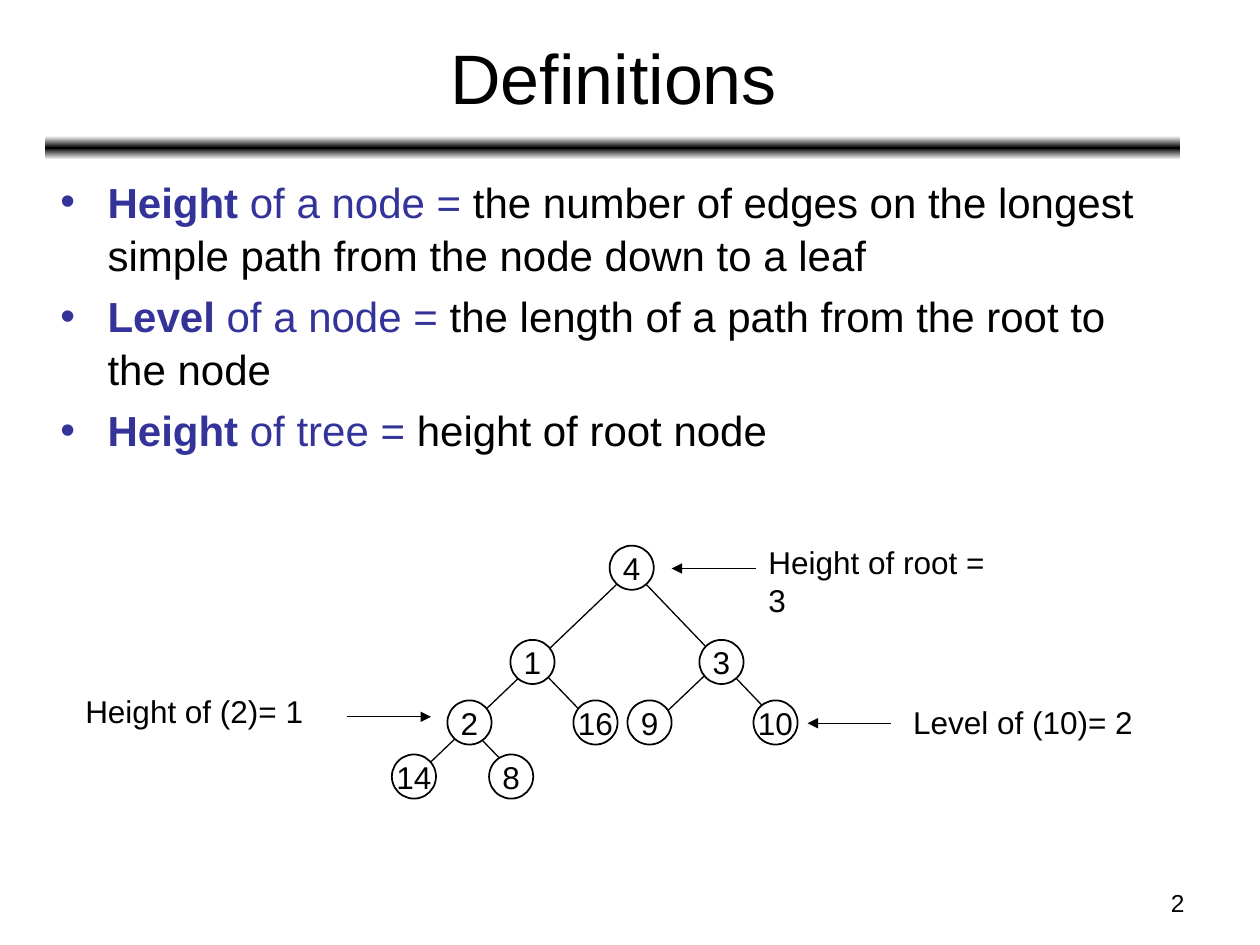
from copy import deepcopy

from lxml.etree import SubElement
from pptx import Presentation
from pptx.dml.color import RGBColor
from pptx.enum.shapes import MSO_CONNECTOR, MSO_SHAPE
from pptx.enum.text import MSO_ANCHOR, PP_ALIGN
from pptx.oxml.ns import qn
from pptx.util import Cm, Pt

BLACK, WHITE, BLUE = "000000", "FFFFFF", "333399"
NODE_SIZE = 0.89
LEVEL_TOPS = [11, 12.9, 14.12, 15.21]


def color(hex_value):
    return RGBColor.from_string(hex_value)


class SlideBuilder:
    font_name = "Arial"

    def __init__(self, slide):
        self.slide = slide

    def style(self, paragraph, size, align=PP_ALIGN.LEFT):
        paragraph.alignment = align
        paragraph.font.name = self.font_name
        paragraph.font.size = Pt(size)
        paragraph.font.color.rgb = color(BLACK)

    def text(self, text, box, size, align=PP_ALIGN.LEFT, anchor=MSO_ANCHOR.TOP, wrap=True):
        shape = self.slide.shapes.add_textbox(*map(Cm, box))
        frame = shape.text_frame
        frame.word_wrap = wrap
        frame.vertical_anchor = anchor
        frame.text = text
        self.style(frame.paragraphs[0], size, align)

    def definitions(self, items, box, size):
        frame = self.slide.shapes.add_textbox(*map(Cm, box)).text_frame
        frame.word_wrap = True
        for index, (term, subject, meaning) in enumerate(items):
            paragraph = frame.add_paragraph() if index else frame.paragraphs[0]
            paragraph.line_spacing = 1.05
            if index:
                paragraph.space_before = Pt(size * 0.2)
            self.bullet(paragraph)
            self.style(paragraph, size)
            for text, hex_value, bold in ((term, BLUE, True), (subject, BLUE, False), (meaning, BLACK, False)):
                run = paragraph.add_run()
                run.text = text
                run.font.bold = bold
                run.font.color.rgb = color(hex_value)

    def bullet(self, paragraph):
        properties = paragraph._p.get_or_add_pPr()
        properties.set("marL", str(Cm(0.95)))
        properties.set("indent", str(Cm(-0.95)))
        SubElement(SubElement(properties, qn("a:buClr")), qn("a:srgbClr"), val=BLUE)
        SubElement(properties, qn("a:buFont"), typeface=self.font_name)
        SubElement(properties, qn("a:buChar"), char="•")

    def gradient_bar(self, box):
        shape = self.slide.shapes.add_shape(MSO_SHAPE.ROUNDED_RECTANGLE, *map(Cm, box))
        shape.shadow.inherit = False
        shape.line.fill.background()
        shape.fill.gradient()
        shape.fill.gradient_angle = 90
        stops = next(shape._element.iter(qn("a:gsLst")))
        stops.append(deepcopy(stops[0]))
        for stop, position, hex_value in zip(shape.fill.gradient_stops, (0, 0.5, 1), (WHITE, BLACK, WHITE)):
            stop.position = position
            stop.color.rgb = color(hex_value)

    def node(self, text, left, top):
        shape = self.slide.shapes.add_shape(MSO_SHAPE.OVAL, *map(Cm, (left, top, NODE_SIZE, NODE_SIZE)))
        shape.shadow.inherit = False
        shape.fill.solid()
        shape.fill.fore_color.rgb = color(WHITE)
        shape.line.color.rgb = color(BLACK)
        shape.line.width = Pt(1)
        frame = shape.text_frame
        frame.word_wrap = False
        frame.vertical_anchor = MSO_ANCHOR.MIDDLE
        frame.text = text
        self.style(frame.paragraphs[0], 18, PP_ALIGN.CENTER)

    def line(self, points, arrow=False):
        connector = self.slide.shapes.add_connector(MSO_CONNECTOR.STRAIGHT, *map(Cm, points))
        connector.line.color.rgb = color(BLACK)
        connector.line.width = Pt(0.75)
        if arrow:
            SubElement(connector.line._get_or_add_ln(), qn("a:tailEnd"), type="triangle")
        SubElement(connector._element.spPr, qn("a:effectLst"))


def main():
    presentation = Presentation()
    presentation.slide_width, presentation.slide_height = Cm(25.4), Cm(19.05)
    builder = SlideBuilder(presentation.slides.add_slide(presentation.slide_layouts[6]))

    builder.gradient_bar((0.91, 2.74, 22.89, 0.48))
    builder.text("2", (18.21, 17.78, 5.92, 0.89), 14, PP_ALIGN.RIGHT)
    builder.text("Definitions", (0.94, 0.28, 22.86, 2.51), 40, PP_ALIGN.CENTER, MSO_ANCHOR.MIDDLE)
    builder.definitions([
        ("Height ", "of a node = ",
         "the number of edges on the longest simple path from the node down to a leaf"),
        ("Level", " of a node = ", "the length of a path from the root to the node"),
        ("Height ", "of tree = ", "height of root node"),
    ], (0.97, 3.38, 22.86, 14.1), 24)

    branches = [
        (13.11, 14.66, 14.53, 13.31),
        (10.54, 15.77, 9.17, 14.35),
        (12.04, 14.68, 10.67, 13.26),
        (15.88, 14.76, 12.47, 11.2),
        (8.38, 15.65, 12.83, 11.4),
    ]
    for branch in branches:
        builder.line(branch)

    nodes = [
        ("2", 9.02, 2), ("14", 7.9, 3), ("8", 9.86, 3),
        ("1", 10.29, 1), ("16", 11.56, 2), ("4", 12.29, 0),
        ("3", 14.1, 1), ("9", 12.65, 2), ("10", 15.19, 2),
    ]
    for text, left, level in nodes:
        builder.node(text, left, LEVEL_TOPS[level])

    callouts = [
        ("Height of root = 3", (15.24, 10.82, 5.38, 1.02), (15.24, 11.46, 13.54, 11.46)),
        ("Height of (2)= 1", (1.47, 13.82, 4.9, 1.02), (6.99, 14.45, 8.69, 14.45)),
        ("Level of (10)= 2", (18.16, 14.05, 4.93, 1.02), (17.96, 14.58, 16.28, 14.58)),
    ]
    for text, box, arrow in callouts:
        builder.text(text, box, 18, wrap=False)
        builder.line(arrow, arrow=True)

    presentation.save("out.pptx")


if __name__ == "__main__":
    main()
